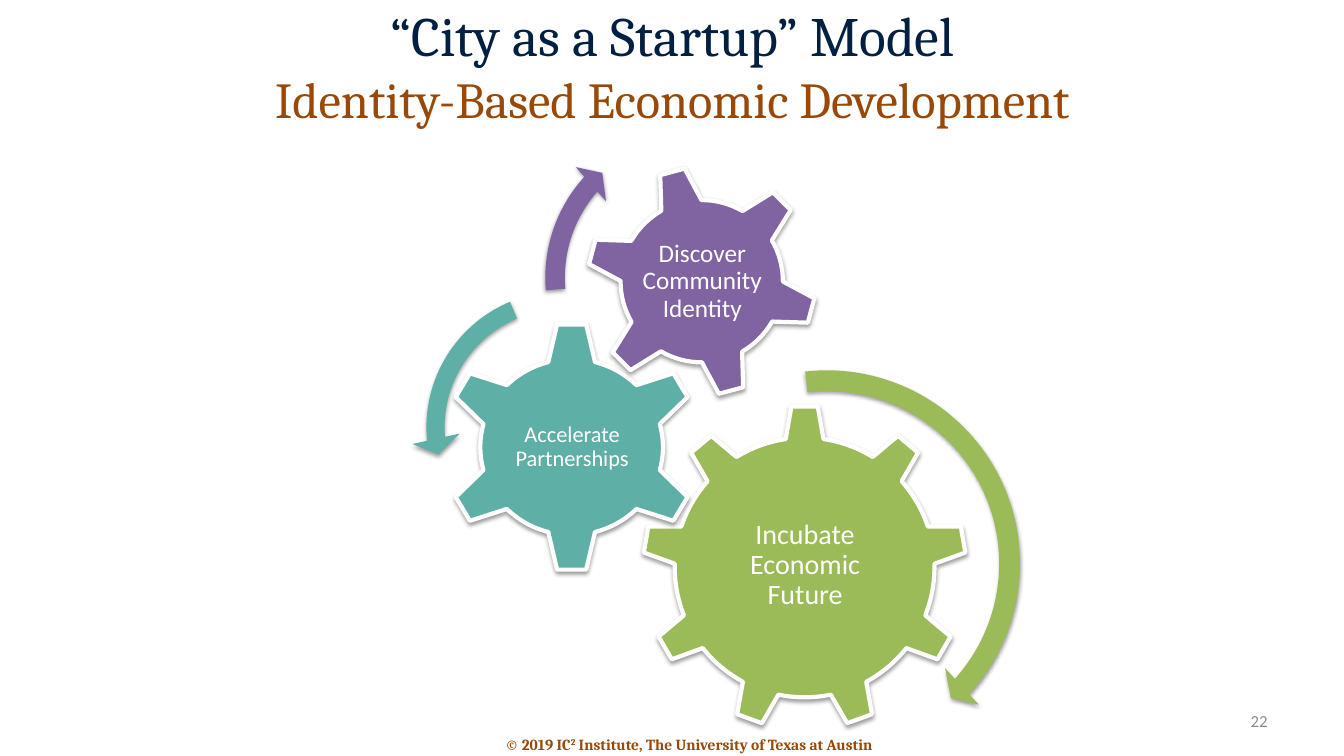
"""Builds the slide on the city as a startup, with three gears and their arrows."""
from dataclasses import dataclass

from lxml.etree import SubElement
from pptx import Presentation
from pptx.dml.color import RGBColor
from pptx.enum.shapes import MSO_SHAPE
from pptx.enum.text import MSO_ANCHOR, MSO_AUTO_SIZE, PP_ALIGN
from pptx.oxml.ns import qn
from pptx.util import Inches, Pt


@dataclass(frozen=True)
class Theme:
    serif: str = "Cambria"
    sans: str = "Calibri"
    navy: str = "002041"
    brown: str = "984807"
    gray: str = "8C8C8C"
    white: str = "FFFFFF"
    green: str = "9BBB59"
    teal: str = "5EAFA6"
    purple: str = "8064A2"
    title: float = 39.6
    sub: float = 36
    big: float = 20
    mid: float = 18
    small: float = 16
    note: float = 12
    foot: float = 11


def write(para, text, font, size, color, bold=False, raised=False):
    run = para.add_run()
    run.text = text
    run.font.name = font
    run.font.size = Pt(size)
    run.font.bold = bold
    run.font.color.rgb = RGBColor.from_string(color)
    if raised:
        run._r.get_or_add_rPr().set("baseline", "30000")


class Deck:
    def __init__(self, theme):
        self.theme = theme
        self.show = Presentation()
        self.show.slide_width = Inches(13.33)
        self.show.slide_height = Inches(7.5)
        self.slide = self.show.slides.add_slide(self.show.slide_layouts[5])

    def title(self, box, top, sub):
        look = self.theme
        shape = self.slide.shapes.title
        shape.left, shape.top, shape.width, shape.height = map(Inches, box)
        frame = shape.text_frame
        frame.auto_size = MSO_AUTO_SIZE.NONE
        frame.vertical_anchor = MSO_ANCHOR.MIDDLE
        para = frame.paragraphs[0]
        para.alignment = PP_ALIGN.CENTER
        write(para, top, look.serif, look.title, look.navy)
        para.add_line_break()
        write(para, sub, look.serif, look.sub, look.brown)

    def text(self, box, align=PP_ALIGN.CENTER, anchor=MSO_ANCHOR.MIDDLE, inset=None):
        frame = self.slide.shapes.add_textbox(*map(Inches, box)).text_frame
        frame.word_wrap = True
        frame.vertical_anchor = anchor
        if inset is not None:
            frame.margin_left = frame.margin_right = Inches(inset)
            frame.margin_top = frame.margin_bottom = Inches(inset)
        para = frame.paragraphs[0]
        para.alignment = align
        return para

    def shape(self, kind, box, color):
        shape = self.slide.shapes.add_shape(kind, *map(Inches, box))
        shape.fill.solid()
        shape.fill.fore_color.rgb = RGBColor.from_string(color)
        shape.line.fill.background()
        shape.shadow.inherit = False
        effects = shape._element.spPr.find(qn("a:effectLst"))
        shade = SubElement(effects, qn("a:outerShdw"), blurRad=str(Pt(3.1)),
                           dist=str(Pt(1.6)), dir="5400000", rotWithShape="0")
        tint = SubElement(shade, qn("a:srgbClr"), val="000000")
        SubElement(tint, qn("a:alpha"), val="38000")
        return shape

    def gear(self, kind, box, color, label, area, size, turn=0):
        look = self.theme
        gear = self.shape(kind, box, color)
        gear.rotation = turn
        gear.line.color.rgb = RGBColor.from_string(look.white)
        gear.line.width = Pt(3)
        para = self.text(area, inset=0.03)
        para.line_spacing = 0.9
        write(para, label, look.sans, size, look.white)

    def arrow(self, kind, box, color, bends):
        arrow = self.shape(kind, box, color)
        for at, bend in enumerate(bends):
            arrow.adjustments[at] = bend


def main():
    look = Theme()
    deck = Deck(look)
    foot = deck.text((3.78, 7.24, 6.11, 0.29), anchor=MSO_ANCHOR.TOP)
    for part, raised in (("© 2019 IC", False), ("2", True),
                         (" Institute, The University of Texas at Austin", False)):
        write(foot, part, look.serif, look.foot, look.brown, bold=True, raised=raised)
    deck.title((0.67, 0.02, 12, 1.25), "“City as a Startup” Model",
               "Identity-Based Economic Development")
    page = deck.text((9.56, 6.95, 3.11, 0.4), align=PP_ALIGN.RIGHT)
    write(page, "22", look.sans, look.note, look.gray)

    deck.gear(MSO_SHAPE.GEAR_9, (6.37, 4.02, 3.22, 3.22), look.green,
              "Incubate Economic Future", (7.02, 4.78, 1.93, 1.66), look.big)
    deck.gear(MSO_SHAPE.GEAR_6, (4.39, 3.19, 2.56, 2.49), look.teal,
              "Accelerate Partnerships", (5.03, 3.82, 1.29, 1.23), look.small)
    deck.gear(MSO_SHAPE.GEAR_6, (5.81, 1.64, 2.3, 2.3), look.purple,
              "Discover Community Identity", (6.32, 2.15, 1.29, 1.29), look.mid, turn=345)

    deck.arrow(MSO_SHAPE.CIRCULAR_ARROW, (6.14, 3.53, 4.12, 4.12), look.green,
               (0.05, 2.99, 25.38, 158.14, 0.06))
    deck.arrow(MSO_SHAPE.LEFT_CIRCULAR_ARROW, (4.08, 2.74, 3, 3), look.teal,
               (0.06, 4.3, 104.89, 148.38, 0.08))
    deck.arrow(MSO_SHAPE.CIRCULAR_ARROW, (5.28, 1.14, 3.23, 3.23), look.purple,
               (0.06, 3.94, 133.14, 105.08, 0.07))
    deck.show.save("out.pptx")


if __name__ == "__main__":
    main()
